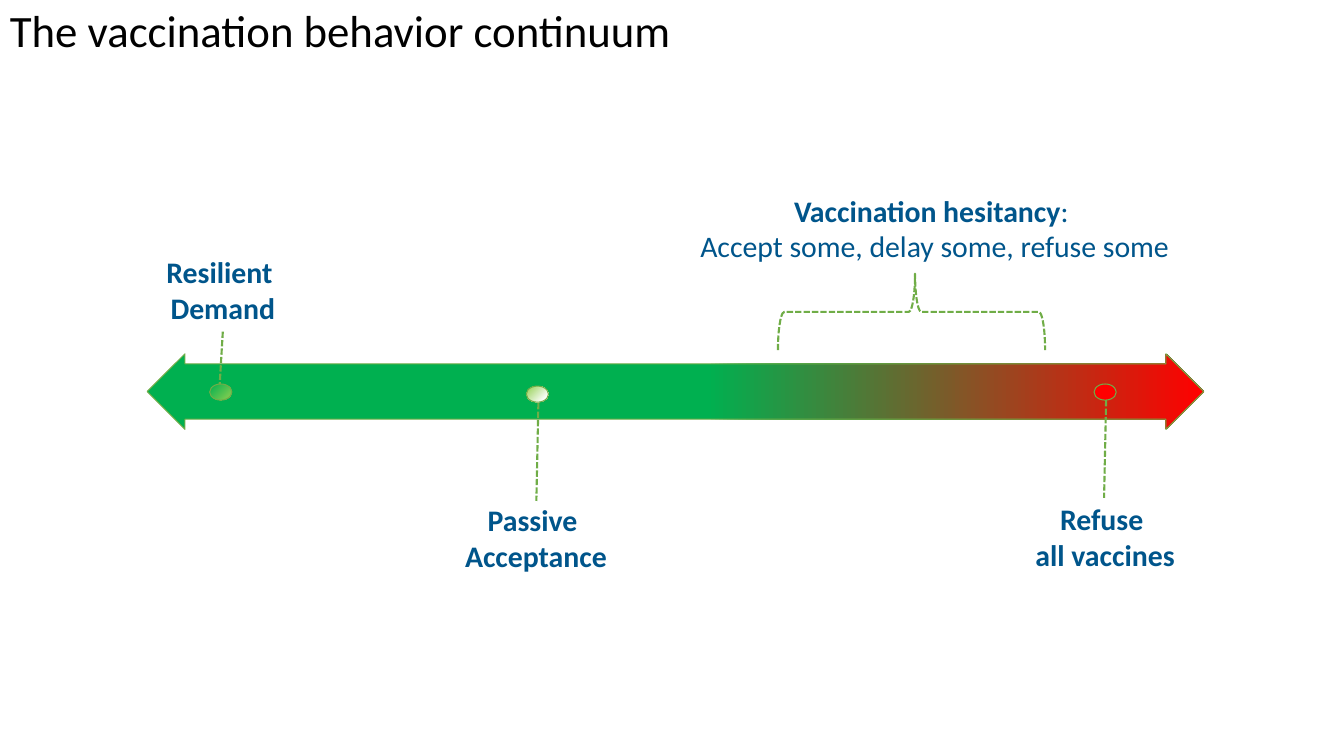
"""Draws the vaccination behavior continuum slide."""
import copy
from dataclasses import dataclass

from lxml import etree
from pptx import Presentation
from pptx import util as u
from pptx.dml.color import RGBColor
from pptx.enum import dml, shapes, text
from pptx.oxml.ns import qn


@dataclass(frozen=True)
class Theme:
    font: str = "Calibri"
    title_size: float = 32
    label_size: float = 21.3
    black: str = "000000"
    blue: str = "00558B"
    outline: str = "70AD47"
    green: str = "00B050"
    lime: str = "92D050"
    white: str = "FFFFFF"
    yellow: str = "FFFF00"
    red: str = "FF0000"
    thin: float = 0.75
    thick: float = 1.5


class Canvas:
    """Holds the theme and slide; positions are percentages of the slide."""

    def __init__(self, prs, theme):
        self.prs = prs
        self.theme = theme
        self.s = prs.slides.add_slide(prs.slide_layouts[6])

    def place(self, *shares):
        sizes = (self.prs.slide_width, self.prs.slide_height) * 2
        return [u.Emu(round(size * share / 100)) for size, share in zip(sizes, shares)]

    def stroke(self, line, width, dashed=False):
        line.color.rgb = RGBColor.from_string(self.theme.outline)
        line.width = u.Pt(width)
        if dashed:
            line.dash_style = dml.MSO_LINE.SQUARE_DOT

    def paint(self, fill, stops, angle):
        if not stops:
            fill.background()
            return
        if len(stops) == 1:
            fill.solid()
            fill.fore_color.rgb = RGBColor.from_string(stops[0][1])
            return
        fill.gradient()
        fill.gradient_angle = -angle % 360
        gs_list = fill._fill._gradFill.find(qn("a:gsLst"))
        for _ in stops[2:]:
            gs_list.append(copy.deepcopy(gs_list[-1]))
        for stop, (position, color) in zip(fill.gradient_stops, stops):
            stop.position = position / 100
            stop.color.rgb = RGBColor.from_string(color)

    def shape(self, kind, box, stops=(), angle=0, adj=(), rotation=0, dashed=False):
        sp = self.s.shapes.add_shape(kind, *self.place(*box))
        sp.shadow.inherit = False
        sp.rotation = rotation
        for i, value in enumerate(adj):
            sp.adjustments[i] = value
        self.paint(sp.fill, stops, angle)
        self.stroke(sp.line, self.theme.thick if dashed else self.theme.thin, dashed)

    def leader(self, *ends):
        line = self.s.shapes.add_connector(shapes.MSO_CONNECTOR.STRAIGHT, *self.place(*ends))
        self.stroke(line.line, self.theme.thick, dashed=True)
        etree.SubElement(line._element.spPr, qn("a:effectLst"))

    def text(self, lines, box, *, size, color, align=text.PP_ALIGN.CENTER,
             anchor=text.MSO_ANCHOR.TOP, wrap=False, spacing=None):
        tf = self.s.shapes.add_textbox(*self.place(*box)).text_frame
        tf.word_wrap = wrap
        tf.vertical_anchor = anchor
        tf.auto_size = text.MSO_AUTO_SIZE.NONE if wrap else text.MSO_AUTO_SIZE.SHAPE_TO_FIT_TEXT
        for i, runs in enumerate(lines):
            p = tf.add_paragraph() if i else tf.paragraphs[0]
            p.alignment = align
            p.line_spacing = spacing
            for words, bold in runs:
                r = p.add_run()
                r.text = words
                r.font.name = self.theme.font
                r.font.size = u.Pt(size)
                r.font.bold = bold
                r.font.color.rgb = RGBColor.from_string(color)


def main():
    prs = Presentation()
    prs.slide_width, prs.slide_height = u.Inches(13.33), u.Inches(7.5)
    theme = Theme()
    canvas = Canvas(prs, theme)
    kinds = shapes.MSO_SHAPE

    canvas.text([[("The vaccination behavior continuum", False)]], (0, 1.47, 93.85, 5.87),
                size=theme.title_size, color=theme.black, align=text.PP_ALIGN.LEFT,
                anchor=text.MSO_ANCHOR.MIDDLE, wrap=True, spacing=0.9)
    canvas.shape(kinds.LEFT_RIGHT_ARROW, (10.95, 46.8, 78.62, 10),
                 [(53, theme.green), (100, theme.red)], adj=(0.732, 0.5))
    canvas.shape(kinds.LEFT_BRACE, (64.97, 23.6, 5.7, 35.33),
                 adj=(0.083, 0.487), rotation=90, dashed=True)

    refuse = [(0, theme.red)]
    passive = [(0, theme.lime), (83, theme.white), (100, theme.yellow)]
    resilient = [(0, theme.green), (100, theme.lime)]
    markers = [
        ((81.4, 50.8), refuse, (82.3, 52.93, 82.15, 65.87)),
        ((39.16, 51.07), passive, (40.06, 53.33, 39.91, 66.27)),
        ((15.6, 50.8), resilient, (16.58, 43.87, 16.35, 50.8)),
    ]
    for corner, stops, ends in markers:
        canvas.shape(kinds.OVAL, (*corner, 1.65, 2.13), stops, angle=45)
        canvas.leader(*ends)

    labels = [
        ([[("Vaccination hesitancy", True), (": ", False)],
          [("Accept some, delay some, refuse some", False)]], (51.09, 24.8, 36.91)),
        ([[("Refuse ", True)], [("all vaccines", True)]], (76.22, 65.6, 12)),
        ([[("Passive ", True)], [("Acceptance", True)]], (33.76, 65.73, 12.23)),
        ([[("Resilient ", True)], [("Demand", True)]], (11.55, 32.93, 10.05)),
    ]
    for lines, box in labels:
        canvas.text(lines, (*box, 10.93), size=theme.label_size, color=theme.blue)

    prs.save("out.pptx")


if __name__ == "__main__":
    main()
